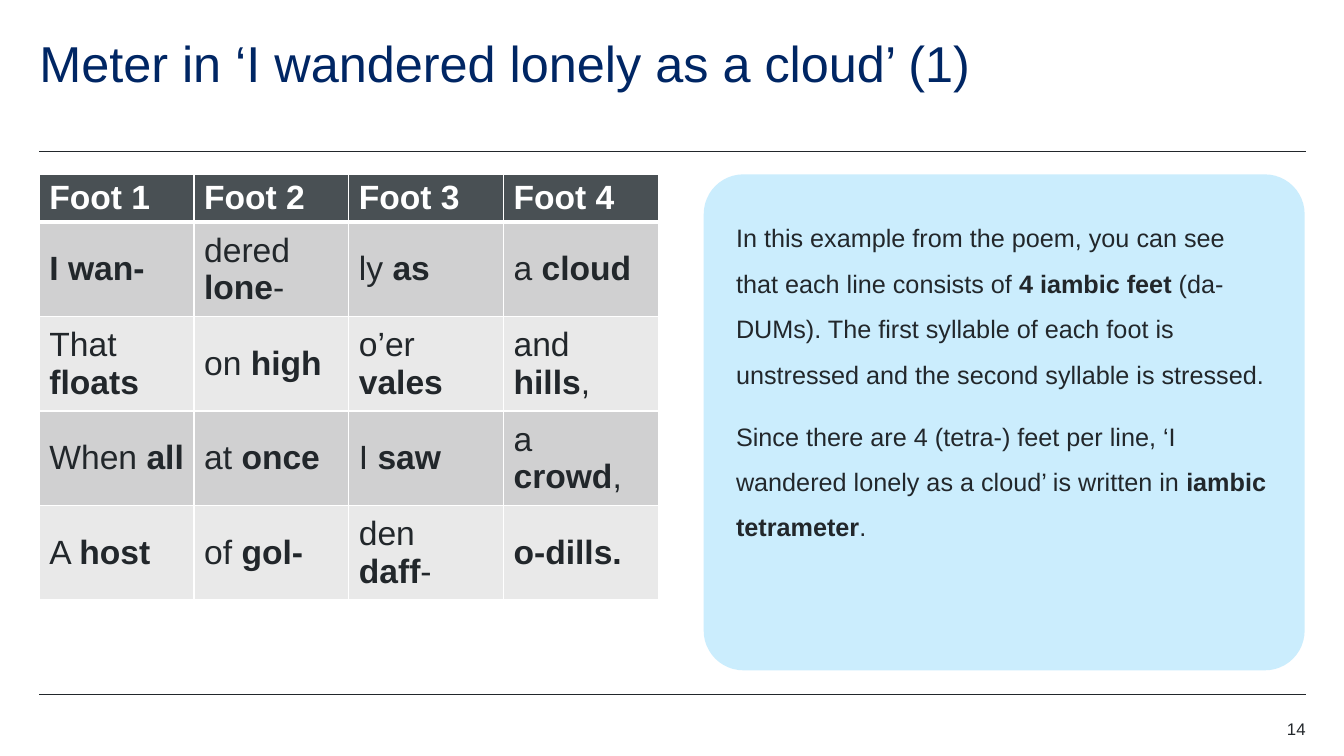
from dataclasses import dataclass

from lxml.etree import SubElement
from pptx import Presentation
from pptx.dml.color import RGBColor
from pptx.enum.shapes import MSO_CONNECTOR, MSO_SHAPE
from pptx.enum.text import MSO_ANCHOR as Anchor, MSO_AUTO_SIZE, PP_ALIGN as Align
from pptx.oxml import parse_xml
from pptx.oxml.ns import nsdecls, qn
from pptx.util import Inches, Pt


@dataclass(frozen=True)
class Theme:
    """Colours, font and type sizes of the slide."""
    font: str = "Arial"
    navy: str = "002664"
    ink: str = "22272B"
    white: str = "FFFFFF"
    header: str = "495054"
    bands: tuple = ("D0D0D1", "E9E9E9")
    card: str = "CBEDFD"
    title_size: int = 36
    table_size: int = 24
    body_size: int = 18
    number_size: int = 12


THEME = Theme()
LEFT, RIGHT = 0.39, 12.95
FEET = [
    ["**Foot 1**", "**Foot 2**", "**Foot 3**", "**Foot 4**"],
    ["**I wan-**", "dered **lone**-", "ly **as**", "a **cloud**"],
    ["That **floats**", "on **high**", "o’er **vales**", "and **hills**,"],
    ["When **all**", "at **once**", "I **saw**", "a **crowd**,"],
    ["A **host**", "of **gol-**", "den **daff**-", "**o-dills.**"],
]
EXPLANATION = [
    "In this example from the poem, you can see that each line consists of "
    "**4 iambic feet **(da-DUMs). The first syllable of each foot is unstressed "
    "and the second syllable is stressed.",
    "Since there are 4 (tetra-) feet per line, ‘I wandered lonely as a cloud’ "
    "is written in **iambic tetrameter**.",
]


def rgb(value):
    """Turn a hex string into a colour."""
    return RGBColor.from_string(value)


def write(paragraph, marked, size, colour):
    """Add runs to a paragraph, with bold between double asterisks."""
    for index, piece in enumerate(marked.split("**")):
        if piece:
            run = paragraph.add_run()
            run.text = piece
            run.font.name = THEME.font
            run.font.size = Pt(size)
            run.font.bold = index % 2 == 1
            run.font.color.rgb = rgb(colour)


def place(holder, box):
    """Move a text shape to a box and clear its margins."""
    holder.left, holder.top, holder.width, holder.height = map(Inches, box)
    frame = holder.text_frame
    frame.margin_left = frame.margin_top = frame.margin_right = frame.margin_bottom = 0
    frame.word_wrap = True
    frame.auto_size = MSO_AUTO_SIZE.NONE
    frame.vertical_anchor = Anchor.TOP
    return frame


def add_rule(slide, y):
    """Draw a thin line across the content width."""
    rule = slide.shapes.add_connector(
        MSO_CONNECTOR.STRAIGHT, Inches(LEFT), Inches(y), Inches(RIGHT), Inches(y))
    rule.line.color.rgb = rgb(THEME.ink)
    rule.line.width = Pt(0.5)
    SubElement(rule.element.spPr, qn("a:effectLst"))


def add_title(slide, box):
    """Fill the title placeholder."""
    heading = place(slide.shapes.title, box).paragraphs[0]
    heading.alignment = Align.LEFT
    heading.line_spacing = 0.9
    write(heading, "Meter in ‘I wandered lonely as a cloud’ (1)",
          THEME.title_size, THEME.navy)


def set_borders(cell, top, bottom):
    """Give a cell white borders of the given top and bottom widths."""
    properties = cell._tc.get_or_add_tcPr()
    widths = {"L": 1, "R": 1, "T": top, "B": bottom}
    for index, (side, width) in enumerate(widths.items()):
        properties.insert(index, parse_xml(
            f'<a:ln{side} {nsdecls("a")} w="{Pt(width)}"><a:solidFill>'
            f'<a:srgbClr val="{THEME.white}"/></a:solidFill></a:ln{side}>'))


def add_feet_table(slide, box, header_height):
    """Lay out the metrical feet, one verse line a row."""
    left, top, width, height = box
    table = slide.shapes.add_table(
        len(FEET), len(FEET[0]), *map(Inches, box)).table
    for column in table.columns:
        column.width = Inches(width / len(FEET[0]))
    for number, (row, feet) in enumerate(zip(table.rows, FEET)):
        is_header = number == 0
        row.height = Inches(
            header_height if is_header else (height - header_height) / (len(FEET) - 1))
        fill = THEME.header if is_header else THEME.bands[(number - 1) % 2]
        for cell, foot in zip(row.cells, feet):
            cell.fill.solid()
            cell.fill.fore_color.rgb = rgb(fill)
            cell.vertical_anchor = Anchor.TOP if is_header else Anchor.MIDDLE
            set_borders(cell, 3 if number == 1 else 1, 3 if is_header else 1)
            write(cell.text_frame.paragraphs[0], foot, THEME.table_size,
                  THEME.white if is_header else THEME.ink)


def add_explanation(slide, box):
    """Set the explanation on a rounded card."""
    left, top, width, height = box
    card = slide.shapes.add_shape(MSO_SHAPE.ROUNDED_RECTANGLE, *map(Inches, box))
    card.adjustments[0] = 0.08
    card.shadow.inherit = False
    card.fill.solid()
    card.fill.fore_color.rgb = rgb(THEME.card)
    card.line.fill.background()
    body = slide.placeholders[1]
    body.element.addprevious(card.element)
    frame = place(body, (left + 0.32, top + 0.33, width - 0.66, height - 0.69))
    for index, passage in enumerate(EXPLANATION):
        paragraph = frame.add_paragraph() if index else frame.paragraphs[0]
        properties = paragraph._p.get_or_add_pPr()
        properties.set("marL", "0")
        properties.set("indent", "0")
        SubElement(properties, qn("a:buNone"))
        paragraph.line_spacing = 1.5
        paragraph.space_before = Pt(0)
        paragraph.space_after = Pt(12)
        write(paragraph, passage, THEME.body_size, THEME.ink)


def add_page_number(slide, box):
    """Write the page number at the right edge."""
    number = place(slide.shapes.add_textbox(*map(Inches, box)), box).paragraphs[0]
    number.alignment = Align.RIGHT
    write(number, "14", THEME.number_size, THEME.ink)


def main():
    """Build the slide and save it."""
    deck = Presentation()
    deck.slide_width, deck.slide_height = Inches(13.33), Inches(7.5)
    slide = deck.slides.add_slide(deck.slide_layouts[1])
    for y in (1.5, 6.89):
        add_rule(slide, y)
    add_title(slide, (LEFT, 0.39, 11.02, 0.6))
    add_feet_table(slide, (LEFT, 1.73, 6.14, 4.21), 0.46)
    add_explanation(slide, (6.98, 1.73, 5.96, 4.92))
    add_page_number(slide, (RIGHT - 0.79, 7.13, 0.79, 0.2))
    deck.save("out.pptx")


if __name__ == "__main__":
    main()
